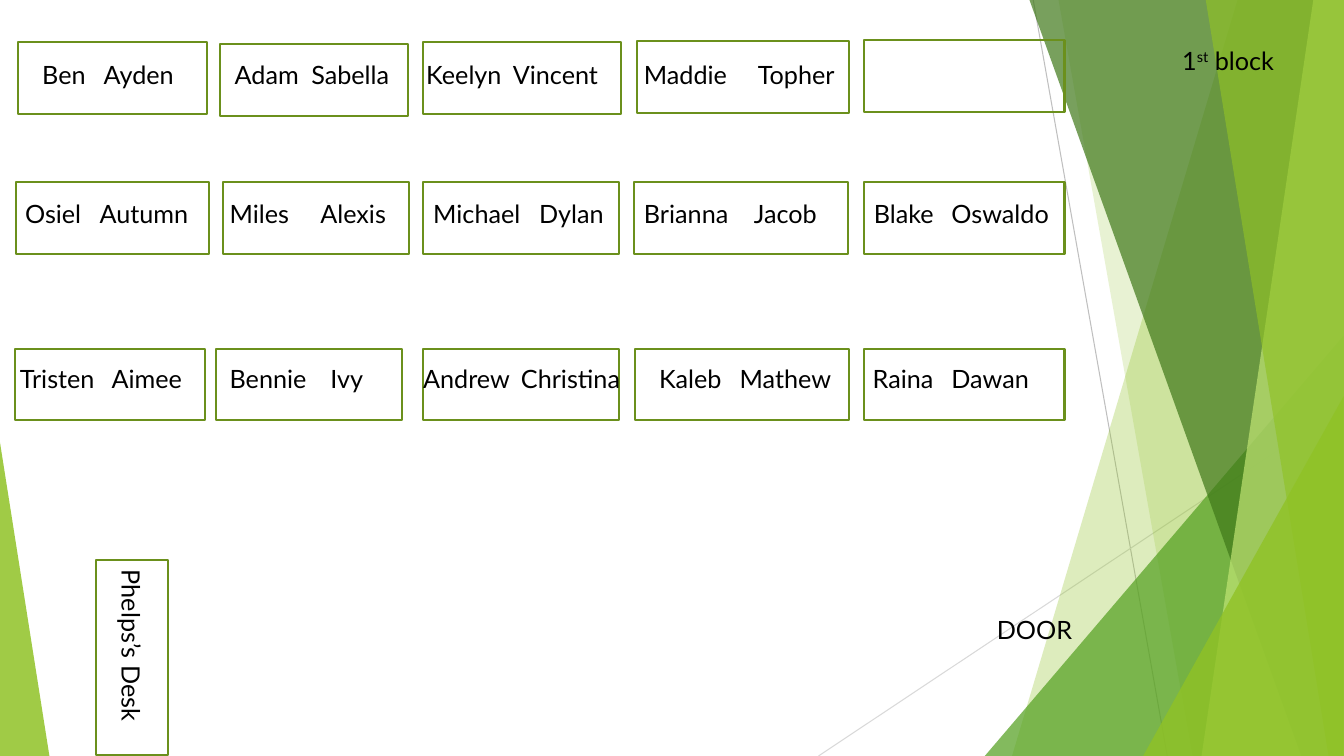
import pptx
import pptx.dml.color
import pptx.enum.shapes
import pptx.enum.text
import pptx.oxml
import pptx.oxml.ns
import pptx.util

KINDS = pptx.enum.shapes.MSO_SHAPE
# The grid has ten columns and ten rows to the inch.
WIDE, HIGH = 133.33, 75
LEAF, EDGE = "90C226", "6B901C"
DESK, LABEL, INSET = 7.1, 4, 1  # desk height, label height, text inset

# Each row: label top, then its desks as
# (left, top, width), (label left, label width, second name's left), names
ROWS = [
    (5.4, [
        ((1.8, 4.2, 18.7), (3.2, 17.2, 10.3), ("Ben", "Ayden")),
        ((21.8, 4.4, 18.7), (22.3, 18.2, 30.9), ("Adam", "Sabella")),
        ((42, 4.2, 19.6), (41.3, 20.4, 50.9), ("Keelyn", "Vincent")),
        ((63.2, 4.1, 21), (62.9, 21.2, 75.2), ("Maddie", "Topher")),
        ((85.7, 4, 19.9), None, None),
    ]),
    (19.2, [
        ((1.6, 18.1, 19.1), (1.5, 19.2, 9.9), ("Osiel", "Autumn")),
        ((22.1, 18.1, 18.5), (21.8, 18.1, 31.8), ("Miles", "Alexis")),
        ((42, 18.1, 19.4), (42, 19.4, 53.5), ("Michael", "Dylan")),
        ((62.9, 18.1, 21.2), (62.9, 21.2, 74.8), ("Brianna", "Jacob")),
        ((85.7, 18.1, 19.9), (85.7, 19.9, 94.4), ("Blake", "Oswaldo")),
    ]),
    (35.6, [
        ((1.5, 34.6, 18.8), (1, 19.4, 11.1), ("Tristen", "Aimee")),
        ((21.4, 34.6, 18.5), (21.8, 17.2, 32.8), ("Bennie", "Ivy")),
        ((42, 34.6, 19.4), (41, 22, 51.7), ("Andrew", "Christina")),
        ((63, 34.6, 21.2), (64.4, 19.7, 73.4), ("Kaleb", "Mathew")),
        ((85.7, 34.6, 19.9), (85.6, 19.6, 94.4), ("Raina", "Dawan")),
    ]),
]


def cell(count):
    return pptx.util.Inches(count / 10)


def tint(code):
    return pptx.dml.color.RGBColor.from_string(code)


def glaze(shape, code, share):
    """Fill a shape with a see-through colour and no outline."""
    shape.shadow.inherit = False
    shape.line.fill.background()
    shape.fill.solid()
    shape.fill.fore_color.rgb = tint(code)
    for node in shape.element.xpath("./p:spPr/a:solidFill/a:srgbClr"):
        alpha = pptx.oxml.parse_xml(
            f'<a:alpha {pptx.oxml.ns.nsdecls("a")} val="{share * 1000}"/>')
        node.append(alpha)


def ray(slide, start, end, code):
    line = slide.shapes.add_connector(
        pptx.enum.shapes.MSO_CONNECTOR.STRAIGHT,
        *map(cell, start), *map(cell, end))
    line.line.color.rgb = tint(code)
    line.line.width = pptx.util.Pt(0.75)
    line.element.spPr.append(pptx.oxml.parse_xml(
        f'<a:effectLst {pptx.oxml.ns.nsdecls("a")}/>'))


def facet(slide, top, base, code, share):
    """Band from a slanted left side to the slide's right edge."""
    form = slide.shapes.build_freeform(cell(top), cell(-0.1), scale=1.0)
    corners = [(WIDE, -0.1), (WIDE, HIGH), (base, HIGH)]
    form.add_line_segments([(cell(x), cell(y)) for x, y in corners])
    glaze(form.convert_to_shape(), code, share)


def wedge(slide, left, top, width, apex, code, share):
    """Right triangle standing on the slide's bottom edge."""
    shape = slide.shapes.add_shape(
        KINDS.ISOSCELES_TRIANGLE,
        cell(left), cell(top), cell(width), cell(HIGH - top))
    shape.adjustments[0] = apex
    glaze(shape, code, share)


def desk(slide, left, top, width, turn=0):
    shape = slide.shapes.add_shape(
        KINDS.RECTANGLE, cell(left), cell(top), cell(width), cell(DESK))
    shape.shadow.inherit = False
    shape.fill.background()
    shape.line.color.rgb = tint(EDGE)
    shape.line.width = pptx.util.Pt(1.5)
    shape.rotation = turn


def label(slide, left, top, width, parts, turn=0, stop=None):
    """Text box; parts are (text, raise in percent), stop is a tab's place."""
    box = slide.shapes.add_textbox(
        cell(left), cell(top), cell(width), cell(LABEL))
    box.rotation = turn
    frame = box.text_frame
    frame.word_wrap = True
    frame.auto_size = pptx.enum.text.MSO_AUTO_SIZE.SHAPE_TO_FIT_TEXT
    para = frame.paragraphs[0]
    if stop:
        para._p.get_or_add_pPr().append(pptx.oxml.parse_xml(
            f'<a:tabLst {pptx.oxml.ns.nsdecls("a")}>'
            f'<a:tab pos="{cell(stop - left - INSET)}" algn="l"/></a:tabLst>'))
    for text, lift in parts:
        run = para.add_run()
        run.text = text
        run.font.name = "Lato"
        run.font.size = pptx.util.Pt(18)
        run.font.color.rgb = tint("000000")
        if lift:
            run.font._element.set("baseline", str(lift * 1000))


def decor(slide):
    ray(slide, (102.5, 0), (115.8, HIGH), "BFBFBF")
    ray(slide, (WIDE, 40.3), (81.2, HIGH), "D9D9D9")
    facet(slide, 122.8, 100.4, LEAF, 30)
    facet(slide, 105, 118.3, LEAF, 20)
    wedge(slide, 97.7, 33.3, 35.6, 1, "54A021", 72)
    facet(slide, 102.1, 129.1, "3F7819", 70)
    facet(slide, 130.3, 119.2, "C0E474", 70)
    facet(slide, 119.6, 131.8, LEAF, 65)
    wedge(slide, 113.4, 39.3, 19.9, 1, LEAF, 80)
    wedge(slide, 0, 43.9, 4.9, 0, LEAF, 85)


def main():
    deck = pptx.Presentation()
    deck.slide_width, deck.slide_height = cell(WIDE), cell(HIGH)
    slide = deck.slides.add_slide(deck.slide_layouts[6])
    decor(slide)

    # Desks
    for _, seats in ROWS:
        for place, _, _ in seats:
            desk(slide, *place)
    desk(slide, 3.4, 61.7, 19.4, turn=90)

    # Room labels
    label(slide, 97.9, 60.5, 20.1, [("DOOR", 0)])
    label(slide, 3, 63.6, 20.1, [("Phelps’s Desk", 0)], turn=90)
    label(slide, 116.3, 4, 14.1, [("1", 0), ("st", 30), (" block", 0)])

    # Two names to a desk, the second one at a tab stop
    for top, seats in ROWS:
        for _, spot, names in seats:
            if names:
                left, width, stop = spot
                label(slide, left, top, width, [("\t".join(names), 0)],
                      stop=stop)

    deck.save("out.pptx")


if __name__ == "__main__":
    main()
